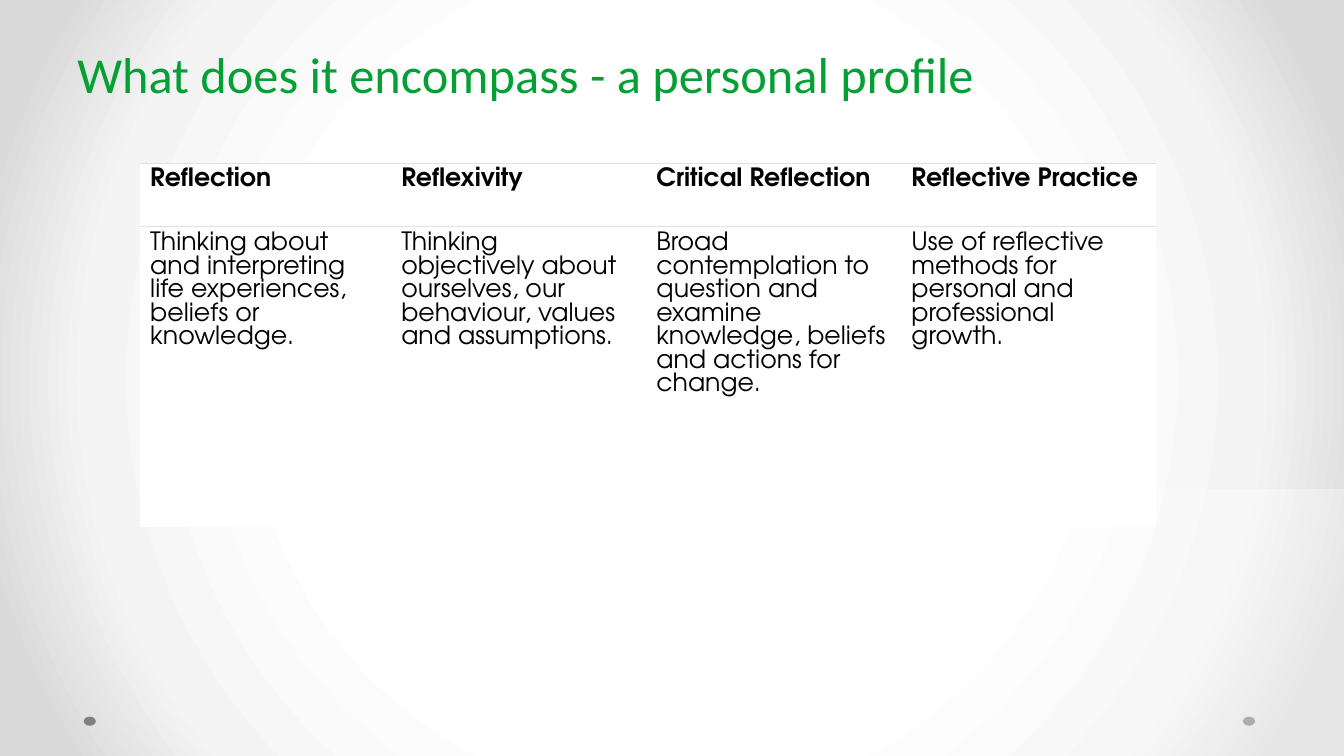
from dataclasses import dataclass
from typing import NamedTuple

from lxml import etree
from pptx import Presentation
from pptx.dml.color import RGBColor
from pptx.enum.shapes import MSO_SHAPE
from pptx.enum.text import MSO_ANCHOR, MSO_AUTO_SIZE, PP_ALIGN
from pptx.oxml import parse_xml
from pptx.oxml.ns import nsdecls, qn
from pptx.shapes.autoshape import Shape
from pptx.slide import Slide
from pptx.table import _Cell
from pptx.text.text import TextFrame
from pptx.util import Inches, Pt

ELLIPSE = MSO_SHAPE.OVAL
RECTANGLE = MSO_SHAPE.RECTANGLE
BOTTOM = MSO_ANCHOR.BOTTOM
TOP = MSO_ANCHOR.TOP
LEFT = PP_ALIGN.LEFT
NO_AUTOFIT = MSO_AUTO_SIZE.NONE

SLIDE_WIDTH = Inches(13.33)
SLIDE_HEIGHT = Inches(7.5)
TITLE_LAYOUT = 5


@dataclass(frozen=True)
class Theme:
    title_font: str = "Calibri"
    table_font: str = "TeX Gyre Adventor"
    title_size: int = 36
    title_line: int = 58
    table_size: int = 18
    border_width: float = 0.5
    title: str = "04A034"
    ink: str = "000000"
    paper: str = "FFFFFF"
    border: str = "DEE2E6"
    dot: str = "808080"
    backdrop: tuple[tuple[int, str], ...] = (
        (50, "FFFFFF"), (76, "F4F4F4"), (92, "DADADA"))


class Box(NamedTuple):
    left: float
    top: float
    width: float
    height: float


class Decoration(NamedTuple):
    shape: MSO_SHAPE
    box: Box
    color: str
    opacity: int


class Concept(NamedTuple):
    name: str
    meaning: str
    width: float


THEME = Theme()
TITLE = "What does it encompass - a personal profile"
TITLE_BOX = Box(5, 3.2, 90, 11.2)
TABLE_BOX = Box(10.43, 21.6, 75.62, 48.13)
ROW_HEIGHTS = (8.4, 39.73)

DECORATIONS = (
    Decoration(ELLIPSE, Box(92.48, 94.8, 0.9, 1.2), THEME.dot, 100),
    Decoration(ELLIPSE, Box(6.23, 94.8, 0.9, 1.2), THEME.dot, 100),
    Decoration(RECTANGLE, Box(55.5, 64.67, 44.5, 35.33), THEME.paper, 36),
)

CONCEPTS = (
    Concept("Reflection",
            "Thinking about and interpreting life experiences, beliefs or knowledge.",
            18.68),
    Concept("Reflexivity",
            "Thinking objectively about ourselves, our behaviour, values and assumptions.",
            18.98),
    Concept("Critical Reflection",
            "Broad contemplation to question and examine knowledge, beliefs and actions for change.",
            18.98),
    Concept("Reflective Practice",
            "Use of reflective methods for personal and professional growth.",
            18.98),
)


def across(share: float) -> int:
    return round(SLIDE_WIDTH * share / 100)


def down(share: float) -> int:
    return round(SLIDE_HEIGHT * share / 100)


def place(box: Box) -> tuple[int, int, int, int]:
    return across(box.left), down(box.top), across(box.width), down(box.height)


def write(frame: TextFrame, text: str, font_name: str, size: int,
          color: str, bold: bool = False) -> None:
    frame.text = text
    frame.word_wrap = True
    paragraph = frame.paragraphs[0]
    paragraph.alignment = LEFT
    for run in paragraph.runs:
        run.font.name = font_name
        run.font.size = Pt(size)
        run.font.bold = bold
        run.font.color.rgb = RGBColor.from_string(color)


def paint_background(slide: Slide) -> None:
    slide.background.fill.gradient()
    linear = slide.element.find(".//" + qn("a:gradFill"))
    stops = "".join(
        f'<a:gs pos="{position * 1000}"><a:srgbClr val="{color}"/></a:gs>'
        for position, color in THEME.backdrop)
    radial = parse_xml(
        f'<a:gradFill {nsdecls("a")} rotWithShape="1"><a:gsLst>{stops}</a:gsLst>'
        '<a:path path="circle"><a:fillToRect l="50000" t="50000" r="50000" b="50000"/>'
        '</a:path></a:gradFill>')
    linear.getparent().replace(linear, radial)


def add_title(slide: Slide) -> None:
    title = slide.shapes.title
    title.left, title.top, title.width, title.height = place(TITLE_BOX)
    frame = title.text_frame
    write(frame, TITLE, THEME.title_font, THEME.title_size, THEME.title)
    frame.auto_size = NO_AUTOFIT
    frame.vertical_anchor = BOTTOM
    frame.paragraphs[0].line_spacing = Pt(THEME.title_line)


def add_decoration(slide: Slide, decoration: Decoration) -> Shape:
    shape = slide.shapes.add_shape(decoration.shape, *place(decoration.box))
    shape.shadow.inherit = False
    shape.line.fill.background()
    shape.fill.solid()
    shape.fill.fore_color.rgb = RGBColor.from_string(decoration.color)
    if decoration.opacity < 100:
        color = shape.fill._xPr.find(".//" + qn("a:srgbClr"))
        etree.SubElement(color, qn("a:alpha"), val=str(decoration.opacity * 1000))
    return shape


def set_borders(cell: _Cell, visible: str) -> None:
    properties = cell._tc.get_or_add_tcPr()
    for index, side in enumerate("LRTB"):
        fill = (f'<a:solidFill><a:srgbClr val="{THEME.border}"/></a:solidFill>'
                if side in visible else "<a:noFill/>")
        properties.insert(index, parse_xml(
            f'<a:ln{side} {nsdecls("a")} w="{Pt(THEME.border_width)}">{fill}</a:ln{side}>'))


def fill_cell(cell: _Cell, text: str, heading: bool) -> None:
    write(cell.text_frame, text, THEME.table_font, THEME.table_size,
          THEME.ink, bold=heading)
    cell.vertical_anchor = TOP
    cell.fill.solid()
    cell.fill.fore_color.rgb = RGBColor.from_string(THEME.paper)
    set_borders(cell, "TB" if heading else "T")


def add_concept_table(slide: Slide) -> None:
    table = slide.shapes.add_table(
        len(ROW_HEIGHTS), len(CONCEPTS), *place(TABLE_BOX)).table
    table.first_row = False
    table.horz_banding = False
    for row, height in zip(table.rows, ROW_HEIGHTS):
        row.height = down(height)
    for index, concept in enumerate(CONCEPTS):
        table.columns[index].width = across(concept.width)
        fill_cell(table.cell(0, index), concept.name, heading=True)
        fill_cell(table.cell(1, index), concept.meaning, heading=False)


def main() -> None:
    presentation = Presentation()
    presentation.slide_width = SLIDE_WIDTH
    presentation.slide_height = SLIDE_HEIGHT
    slide = presentation.slides.add_slide(presentation.slide_layouts[TITLE_LAYOUT])
    paint_background(slide)
    for decoration in DECORATIONS:
        add_decoration(slide, decoration)
    add_title(slide)
    add_concept_table(slide)
    presentation.save("out.pptx")


if __name__ == "__main__":
    main()
